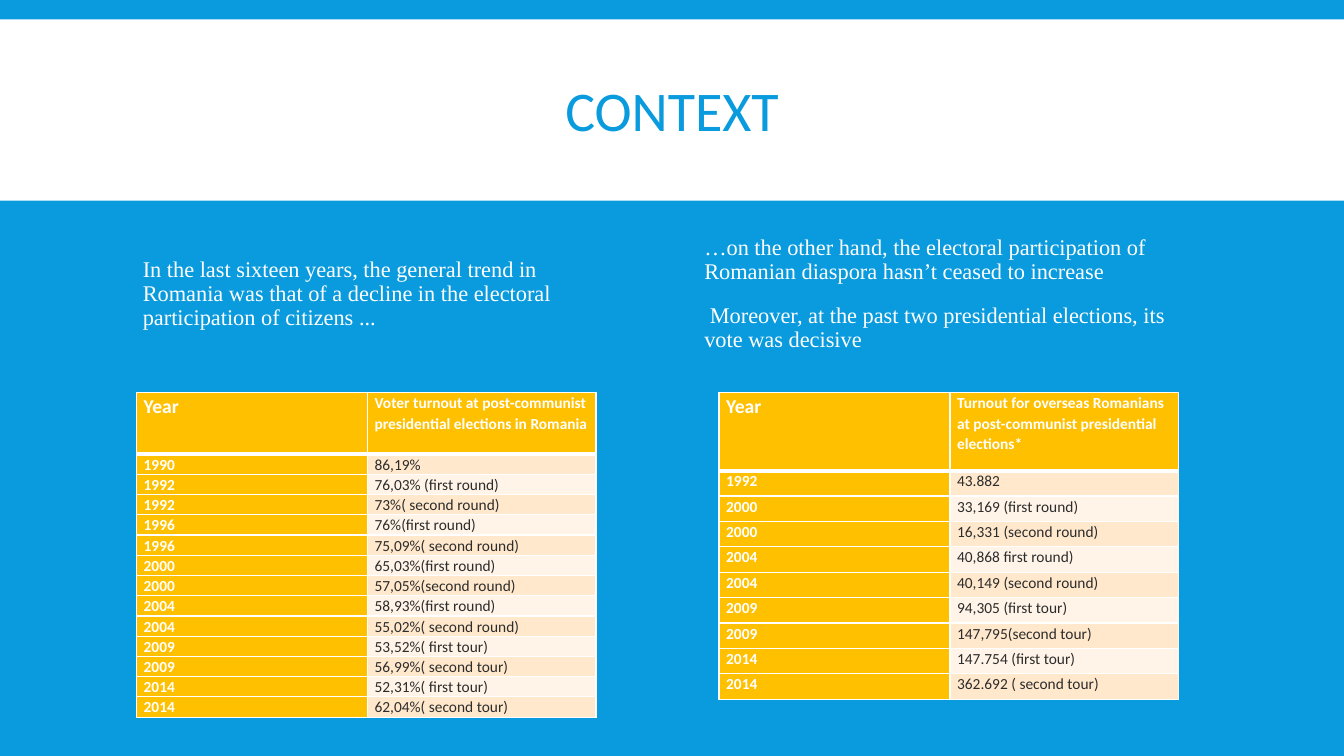
from dataclasses import dataclass

from lxml.etree import SubElement
from pptx import Presentation
from pptx.dml.color import RGBColor
from pptx.enum.shapes import MSO_SHAPE
from pptx.enum.text import MSO_ANCHOR, PP_ALIGN
from pptx.oxml.ns import qn
from pptx.util import Cm, Pt


@dataclass(frozen=True)
class Theme:
    blue: str = "099BDD"
    white: str = "FFFFFF"
    amber: str = "FFC000"
    ink: str = "2C2C2C"
    bands: tuple = ("FFE8CC", "FFF4E7")
    sans: str = "Calibri"
    serif: str = "Times New Roman"
    title_size: int = 40
    body_size: int = 16
    year_size: int = 14
    cell_size: int = 11
    thin: int = 1
    thick: int = 3


THEME = Theme()

HOME_TURNOUT = [
    ("Year", "Voter turnout at post-communist presidential elections in Romania"),
    ("1990", "86,19%"),
    ("1992", "76,03% (first round)"),
    ("1992", "73%( second round)"),
    ("1996", "76%(first round)"),
    ("1996", "75,09%( second round)"),
    ("2000", "65,03%(first round)"),
    ("2000", "57,05%(second round)"),
    ("2004", "58,93%(first round)"),
    ("2004", "55,02%( second round)"),
    ("2009", "53,52%( first tour)"),
    ("2009", "56,99%( second tour)"),
    ("2014", "52,31%( first tour)"),
    ("2014", "62,04%( second tour)"),
]
OVERSEAS_TURNOUT = [
    ("Year", "Turnout for overseas Romanians at post-communist presidential elections*"),
    ("1992", "43.882"),
    ("2000", "33,169 (first round)"),
    ("2000", "16,331 (second round)"),
    ("2004", "40,868 first round)"),
    ("2004", "40,149 (second round)"),
    ("2009", "94,305 (first tour)"),
    ("2009", "147,795(second tour)"),
    ("2014", "147.754 (first tour)"),
    ("2014", "362.692 ( second tour)"),
]
HOME_TREND = [
    "In the last sixteen years, the general trend in Romania was that of a decline "
    "in the electoral participation of citizens ...",
]
OVERSEAS_TREND = [
    "…on the other hand, the electoral participation of Romanian diaspora "
    "hasn’t ceased to increase",
    " Moreover, at the past two presidential elections, its vote was decisive",
]


def rgb(code):
    return RGBColor.from_string(code)


def style(paragraph, face, size, color, spacing, bold=False):
    paragraph.line_spacing = spacing
    for run in paragraph.runs:
        font = run.font
        font.name, font.size, font.bold = face, Pt(size), bold
        font.color.rgb = rgb(color)


def add_text_frame(slide, left, top, width, height):
    frame = slide.shapes.add_textbox(Cm(left), Cm(top), Cm(width), Cm(height)).text_frame
    frame.word_wrap = True
    frame.vertical_anchor = MSO_ANCHOR.MIDDLE
    return frame


def add_title_band(slide, left, top, width, height, title):
    band = slide.shapes.add_shape(
        MSO_SHAPE.RECTANGLE, Cm(left), Cm(top), Cm(width), Cm(height))
    band.shadow.inherit = False
    band.fill.solid()
    band.fill.fore_color.rgb = rgb(THEME.white)
    band.line.fill.background()

    margin = 3.35
    frame = add_text_frame(slide, left + margin, top + 0.3, width - 2 * margin, height - 0.38)
    frame.text = title
    heading = frame.paragraphs[0]
    heading.alignment = PP_ALIGN.CENTER
    style(heading, THEME.sans, THEME.title_size, THEME.blue, 0.85)


def add_trend(slide, left, top, width, height, statements):
    frame = add_text_frame(slide, left, top, width, height)
    frame.text = "\n".join(statements)
    for paragraph in frame.paragraphs:
        paragraph.space_before, paragraph.space_after = Pt(12), Pt(2)
        style(paragraph, THEME.serif, THEME.body_size, THEME.white, 0.9)


def add_borders(cell, top, bottom):
    properties = cell._tc.get_or_add_tcPr()
    sides = {"a:lnL": THEME.thin, "a:lnR": THEME.thin, "a:lnT": top, "a:lnB": bottom}
    for side, weight in sides.items():
        line = SubElement(properties, qn(side), w=str(Pt(weight)))
        fill = SubElement(line, qn("a:solidFill"))
        SubElement(fill, qn("a:srgbClr"), val=THEME.white)


def style_cell(cell, row, column):
    is_header, is_year = row == 0, column == 0
    add_borders(cell,
                top=THEME.thick if row == 1 else THEME.thin,
                bottom=THEME.thick if is_header else THEME.thin)
    highlighted = is_header or is_year
    cell.fill.solid()
    cell.fill.fore_color.rgb = rgb(THEME.amber if highlighted else THEME.bands[(row - 1) % 2])
    cell.margin_left = cell.margin_right = Cm(0.18)
    cell.margin_top = cell.margin_bottom = 0
    style(cell.text_frame.paragraphs[0], THEME.sans,
          THEME.year_size if is_header and is_year else THEME.cell_size,
          THEME.white if highlighted else THEME.ink, 1.07, highlighted)


def add_turnout_table(slide, left, top, width, header_height, row_height, turnout):
    height = header_height + row_height * (len(turnout) - 1)
    table = slide.shapes.add_table(
        len(turnout), 2, Cm(left), Cm(top), Cm(width), Cm(height)).table
    year_width = 5.82
    table.columns[0].width = Cm(year_width)
    table.columns[1].width = Cm(width - year_width)
    for row, record in enumerate(turnout):
        table.rows[row].height = Cm(row_height if row else header_height)
        for column, value in enumerate(record):
            cell = table.cell(row, column)
            cell.text = value
            style_cell(cell, row, column)


def add_context_slide(deck):
    slide = deck.slides.add_slide(deck.slide_layouts[6])
    slide.background.fill.solid()
    slide.background.fill.fore_color.rgb = rgb(THEME.blue)

    add_title_band(slide, 0, 0.49, 33.87, 4.57, "CONTEXT")

    trend_top, trend_height = 5.31, 4.22
    add_trend(slide, 3.35, trend_top, 11.66, trend_height, HOME_TREND)
    add_trend(slide, 17.5, trend_top, 13.2, trend_height, OVERSEAS_TREND)

    table_top, table_width = 9.9, 11.58
    add_turnout_table(slide, 3.44, table_top, table_width, 1.54, 0.51, HOME_TURNOUT)
    add_turnout_table(slide, 18.12, table_top, table_width, 1.96, 0.64, OVERSEAS_TURNOUT)


def main():
    deck = Presentation()
    deck.slide_width, deck.slide_height = Cm(33.87), Cm(19.05)
    add_context_slide(deck)
    deck.save("out.pptx")


if __name__ == "__main__":
    main()
